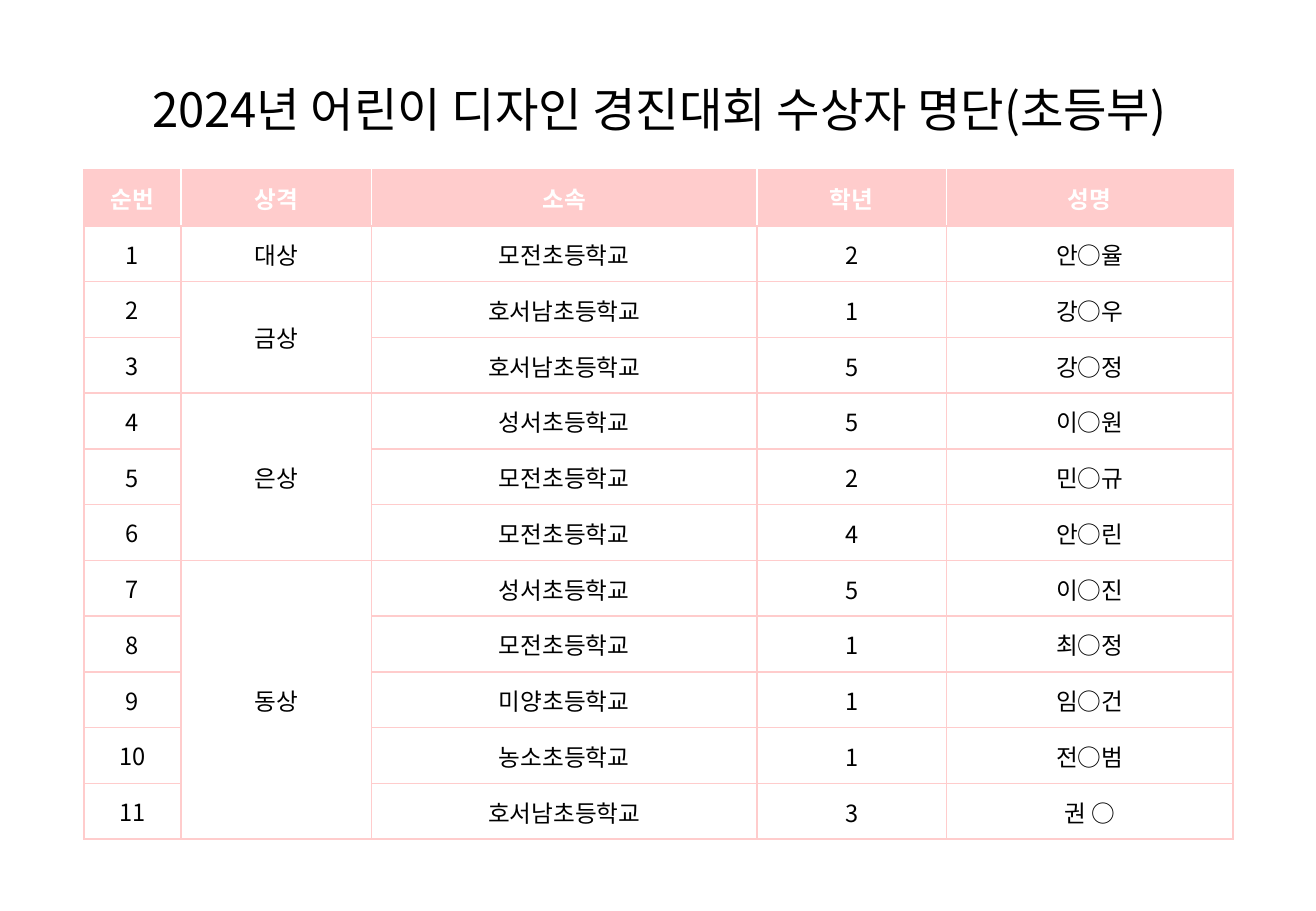
from typing import NamedTuple

from lxml import etree
from pptx import Presentation
from pptx.dml.color import RGBColor
from pptx.enum.text import MSO_ANCHOR, MSO_AUTO_SIZE, PP_ALIGN
from pptx.oxml.ns import qn
from pptx.table import Table, _Cell
from pptx.text.text import TextFrame
from pptx.util import Pt

CENTER = PP_ALIGN.CENTER
MIDDLE = MSO_ANCHOR.MIDDLE
NO_AUTOFIT = MSO_AUTO_SIZE.NONE

FONT = "Noto Sans CJK KR"
PINK, WHITE, BLACK = "FFCCCC", "FFFFFF", "000000"

TITLE = "2024년 어린이 디자인 경진대회 수상자 명단(초등부)"
HEADERS = ["순번", "상격", "소속", "학년", "성명"]
COLUMN_WIDTHS = [57.6, 113, 228.2, 112.3, 169.9]
ROW_HEIGHT = 33.07
PRIZE_COLUMN = 1
FIRST_TIGHT_COLUMN = 2


class Winner(NamedTuple):
    school: str
    grade: int
    name: str


class Prize(NamedTuple):
    label: str
    winners: list[Winner]


PRIZES = [
    Prize("대상", [Winner("모전초등학교", 2, "안○율")]),
    Prize("금상", [
        Winner("호서남초등학교", 1, "강○우"),
        Winner("호서남초등학교", 5, "강○정"),
    ]),
    Prize("은상", [
        Winner("성서초등학교", 5, "이○원"),
        Winner("모전초등학교", 2, "민○규"),
        Winner("모전초등학교", 4, "안○린"),
    ]),
    Prize("동상", [
        Winner("성서초등학교", 5, "이○진"),
        Winner("모전초등학교", 1, "최○정"),
        Winner("미양초등학교", 1, "임○건"),
        Winner("농소초등학교", 1, "전○범"),
        Winner("호서남초등학교", 3, "권 ○"),
    ]),
]


def color(code: str) -> RGBColor:
    return RGBColor.from_string(code)


def write(frame: TextFrame, text: str, size: float, code: str, bold: bool = False) -> None:
    frame.text = text
    para = frame.paragraphs[0]
    para.alignment = CENTER
    for span in para.runs:
        span.font.size = Pt(size)
        span.font.bold = bold
        span.font.name = FONT
        span.font.color.rgb = color(code)
        east_asian = etree.SubElement(span.font._element, qn("a:ea"))
        east_asian.set("typeface", FONT)


def add_border(cell: _Cell, side: str, code: str) -> None:
    properties = cell._tc.get_or_add_tcPr()
    line = etree.SubElement(properties, qn(f"a:ln{side}"), w=str(Pt(1)))
    fill = etree.SubElement(line, qn("a:solidFill"))
    etree.SubElement(fill, qn("a:srgbClr"), val=code)


def fill_cell(table: Table, row: int, column: int, text: str) -> None:
    cell = table.cell(row, column)
    header = row == 0
    inner = WHITE if header else PINK
    last = len(HEADERS) - 1
    add_border(cell, "L", inner if column > 0 else PINK)
    add_border(cell, "R", inner if column < last else PINK)
    add_border(cell, "T", PINK)
    add_border(cell, "B", PINK)
    cell.fill.solid()
    cell.fill.fore_color.rgb = color(PINK if header else WHITE)
    cell.vertical_anchor = MIDDLE
    if not header and column >= FIRST_TIGHT_COLUMN:
        cell.margin_left = cell.margin_right = cell.margin_top = Pt(0.72)
        cell.margin_bottom = Pt(0)
    write(cell.text_frame, text, 14, WHITE if header else BLACK, header)


def main() -> None:
    deck = Presentation()
    deck.slide_width, deck.slide_height = Pt(779.76), Pt(540)
    page = deck.slides.add_slide(deck.slide_layouts[5])

    title = page.shapes.title
    title.left, title.top = Pt(50.4), Pt(43.9)
    title.width, title.height = Pt(680.4), Pt(41)
    title.text_frame.auto_size = NO_AUTOFIT
    title.text_frame.vertical_anchor = MIDDLE
    write(title.text_frame, TITLE, 28, BLACK)

    rows = [HEADERS]
    for prize in PRIZES:
        for position, winner in enumerate(prize.winners):
            label = prize.label if position == 0 else ""
            rows.append([str(len(rows)), label, winner.school, str(winner.grade), winner.name])

    table = page.shapes.add_table(
        len(rows), len(HEADERS), Pt(49.7), Pt(100.8),
        Pt(sum(COLUMN_WIDTHS)), Pt(ROW_HEIGHT * len(rows)),
    ).table
    table.horz_banding = False
    for column, width in zip(table.columns, COLUMN_WIDTHS):
        column.width = Pt(width)
    for row_index, texts in enumerate(rows):
        table.rows[row_index].height = Pt(ROW_HEIGHT)
        for column_index, text in enumerate(texts):
            fill_cell(table, row_index, column_index, text)

    first = 1
    for prize in PRIZES:
        last = first + len(prize.winners) - 1
        if last > first:
            table.cell(first, PRIZE_COLUMN).merge(table.cell(last, PRIZE_COLUMN))
        first = last + 1

    deck.save("out.pptx")


if __name__ == "__main__":
    main()
